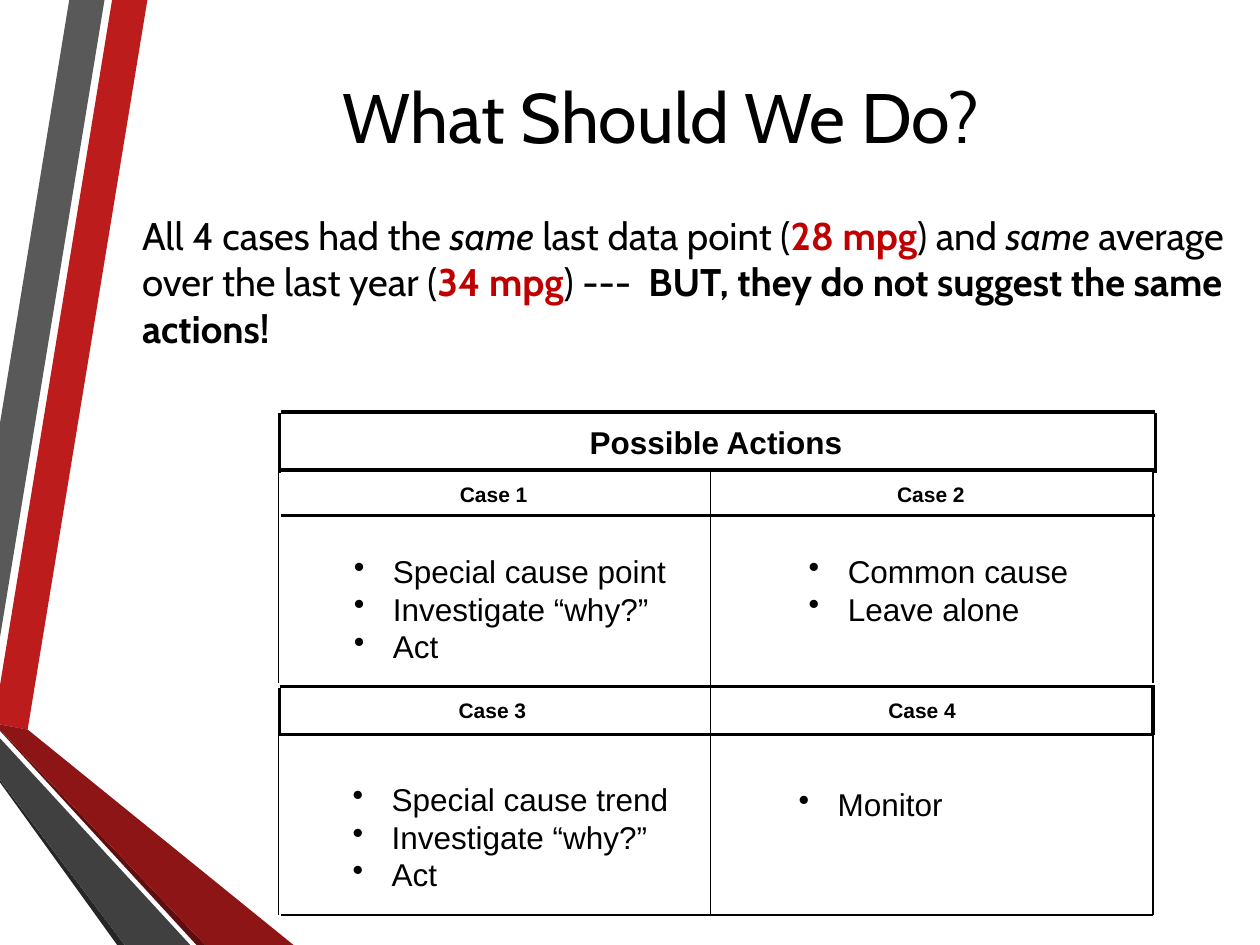
"""Build the "What Should We Do?" slide with its grid of possible actions."""
import pptx
import pptx.dml.color
import pptx.enum.shapes
import pptx.enum.text
import pptx.oxml
import pptx.oxml.ns
import pptx.util

Inches = pptx.util.Inches
Pt = pptx.util.Pt
ANCHOR = pptx.enum.text.MSO_ANCHOR
ALIGN = pptx.enum.text.PP_ALIGN
AUTO = pptx.enum.text.MSO_AUTO_SIZE

COLORS = {
    "black": "000000", "white": "FFFFFF", "accent": "C00000",
    "red": "BC1C1C", "gray": "595959", "charcoal": "262626",
    "maroon": "5E0E0E", "dark_red": "8D1515", "dark_gray": "404040",
}

RIBBONS = [
    ("red", [(0, 5.44), (0, 5.75), (0.22, 5.79), (1.17, 0), (0.89, 0)]),
    ("gray", [(0.83, 0), (0.55, 0), (0, 3.36), (0, 5.06)]),
    ("charcoal", [(0, 6.19), (0, 6.21), (0.93, 7.5), (0.99, 7.5)]),
    ("maroon", [(0, 5.79), (0, 5.8), (1.56, 7.5), (1.63, 7.5)]),
    ("dark_red", [(0, 5.79), (1.63, 7.5), (2.33, 7.5), (0.22, 5.79), (0, 5.75)]),
    ("dark_gray", [(0, 6.19), (0.99, 7.5), (1.51, 7.5), (0, 5.86)]),
]

ITALIC = {"italic": True}
BOLD = {"bold": True}
FIGURE = {"bold": True, "color": "accent"}
MESSAGE = [
    ("All 4 cases had the ", {}), ("same", ITALIC), (" last data point (", {}),
    ("28 mpg", FIGURE), (") and ", {}), ("same", ITALIC),
    (" average over the last year (", {}), ("34 mpg", FIGURE), (") --- ", {}),
    (" BUT, they do not suggest the same actions!", BOLD),
]

HEADINGS = [
    ("Possible Actions", 18, (4.59, 3.31, 2.21, 0.39)),
    ("Case 1", 12, (3.56, 3.77, 0.73, 0.29)),
    ("Case 2", 12, (7.03, 3.77, 0.73, 0.29)),
    ("Case 3", 12, (3.55, 5.49, 0.73, 0.29)),
    ("Case 4", 12, (6.96, 5.49, 0.73, 0.29)),
]

ROW_RULES = [
    (2.23, 9.17, 3.27, 2), (2.23, 9.17, 3.73, 2), (2.23, 9.17, 4.09, 2),
    (2.22, 9.17, 5.45, 2), (2.21, 9.16, 5.83, 2), (2.23, 9.15, 7.26, 1),
]
SIDE_SPANS = [(3.28, 3.75, 2), (3.74, 5.42, 1), (5.46, 5.83, 2), (5.63, 7.26, 1)]
LEFT_SIDE = (2.22, 2.21, 2.22, 2.21)
RIGHT_SIDE = (9.17, 9.15, 9.15, 9.15)

ACTIONS = [
    (["Special cause point", "Investigate “why?”", "Act"], (2.71, 4.33, 2.7, 1.01)),
    (["Common cause", "Leave alone"], (6.32, 4.33, 2.28, 0.71)),
    (["Special cause trend", "Investigate “why?”", "Act"], (2.7, 6.14, 2.73, 1.01)),
    (["Monitor"], (6.24, 6.18, 1.36, 0.4)),
]


def rgb(name):
    return pptx.dml.color.RGBColor.from_string(COLORS[name])


def set_attrs(obj, values):
    for name, value in values.items():
        setattr(obj, name, value)


def paint(sp, color):
    sp.shadow.inherit = False
    sp.fill.solid()
    sp.fill.fore_color.rgb = rgb(color)
    sp.line.fill.background()


def add_run(p, text, size, font="Arial", color="black", **style):
    r = p.add_run()
    r.text = text
    set_attrs(r.font, {"name": font, "size": Pt(size), **style})
    r.font.color.rgb = rgb(color)


def add_textbox(s, box, **frame):
    tf = s.shapes.add_textbox(*map(Inches, box)).text_frame
    set_attrs(tf, {"word_wrap": True, **frame})
    return tf


def add_ribbon(s, color, points):
    start, *rest = [(Inches(x), Inches(y)) for x, y in points]
    builder = s.shapes.build_freeform(*start)
    builder.add_line_segments(rest, close=True)
    paint(builder.convert_to_shape(), color)


def add_heading(s, text, size, box):
    sp = s.shapes.add_shape(pptx.enum.shapes.MSO_SHAPE.RECTANGLE, *map(Inches, box))
    paint(sp, "white")
    tf = sp.text_frame
    set_attrs(tf, {
        "word_wrap": False, "auto_size": AUTO.SHAPE_TO_FIT_TEXT,
        "vertical_anchor": ANCHOR.TOP,
        "margin_left": Inches(0.09), "margin_right": Inches(0.09),
    })
    p = tf.paragraphs[0]
    p.alignment = ALIGN.LEFT
    add_run(p, text, size, bold=True)


def add_rule(s, x1, y1, x2, y2, width):
    kind = pptx.enum.shapes.MSO_CONNECTOR.STRAIGHT
    sp = s.shapes.add_connector(kind, *map(Inches, (x1, y1, x2, y2)))
    sp.line.color.rgb = rgb("black")
    sp.line.width = Pt(width)
    props = sp._element.spPr
    props.append(props.makeelement(pptx.oxml.ns.qn("a:effectLst"), {}))


def add_bullet(p):
    props = p._p.get_or_add_pPr()
    props.set("marL", str(Inches(0.31)))
    props.set("indent", str(-Inches(0.31)))
    bullet = props.makeelement(pptx.oxml.ns.qn("a:buChar"), {"char": "•"})
    props.append(bullet)


def add_actions(s, items, box):
    tf = add_textbox(s, box, word_wrap=False, auto_size=AUTO.SHAPE_TO_FIT_TEXT)
    for i, item in enumerate(items):
        p = tf.add_paragraph() if i else tf.paragraphs[0]
        add_bullet(p)
        add_run(p, item, 18)


def add_title(s):
    tf = add_textbox(s, (1.03, -0.17, 8.43, 2.17), vertical_anchor=ANCHOR.MIDDLE)
    p = tf.paragraphs[0]
    p.alignment = ALIGN.CENTER
    add_run(p, "What Should We Do?", 40, "Cabin")


def add_message(s):
    tf = add_textbox(s, (1.03, 1.61, 8.83, 1.25), vertical_anchor=ANCHOR.MIDDLE)
    p = tf.paragraphs[0]
    set_attrs(p, {"space_before": Pt(4.4), "space_after": Pt(6)})
    for text, style in MESSAGE:
        add_run(p, text, 22, "Cabin", **style)


def add_grid(s):
    for x1, x2, y, width in ROW_RULES:
        add_rule(s, x1, y, x2, y, width)
    for side in (LEFT_SIDE, RIGHT_SIDE):
        for x, (y1, y2, width) in zip(side, SIDE_SPANS):
            add_rule(s, x, y1, x, y2, width)
    add_rule(s, 5.64, 3.74, 5.64, 7.26, 1)


def main():
    prs = pptx.Presentation()
    set_attrs(prs, {"slide_width": Inches(10), "slide_height": Inches(7.5)})
    s = prs.slides.add_slide(prs.slide_layouts[6])
    for ribbon in RIBBONS:
        add_ribbon(s, *ribbon)
    add_title(s)
    add_message(s)
    for heading in HEADINGS:
        add_heading(s, *heading)
    add_grid(s)
    for actions in ACTIONS:
        add_actions(s, *actions)
    prs.save("out.pptx")


if __name__ == "__main__":
    main()
